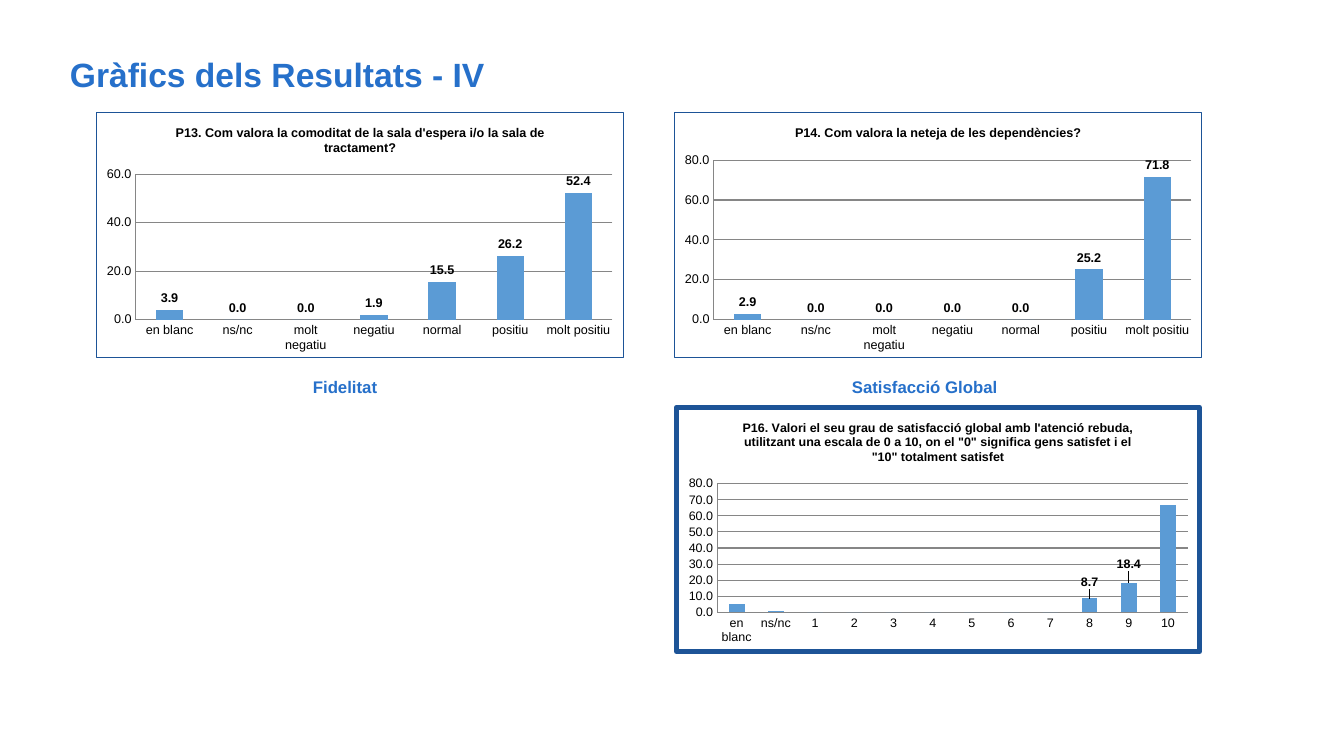
from dataclasses import dataclass
from lxml.etree import SubElement as Sub
from pptx import Presentation
from pptx.chart.data import CategoryChartData as Data
from pptx.dml.color import RGBColor as Rgb
from pptx.enum.chart import XL_CHART_TYPE as Kind, XL_LABEL_POSITION as Pos, XL_TICK_MARK as Tick
from pptx.enum.text import MSO_ANCHOR as Anchor
from pptx.oxml import parse_xml
from pptx.oxml.ns import nsdecls, qn
from pptx.util import Emu, Pt


@dataclass(frozen=True)
class Theme:
    font: str = "Arial"
    blue: str = "2670CA"
    edge: str = "1D5497"
    bar: str = "5B9BD5"
    grid: str = "868686"
    ink: str = "000000"
    head: int = 24
    sub: int = 12
    small: int = 9


LOOK = Theme()
SCALE = 914400 / 100.8
RATES = ["en blanc", "ns/nc", "molt negatiu", "negatiu", "normal", "positiu", "molt positiu"]
MARKS = ["en blanc", "ns/nc"] + [str(n) for n in range(1, 11)]


def px(n):
    return Emu(round(n * SCALE))


def style(font, size, color=LOOK.ink, bold=False):
    font.name = LOOK.font
    font.size = Pt(size)
    font.bold = bold
    font.color.rgb = Rgb.from_string(color)


def write(slide, text, box, size=LOOK.sub, color=LOOK.blue, bold=True, wrap=True,
          anchor=Anchor.TOP, space=1.0):
    frame = slide.shapes.add_textbox(*map(px, box)).text_frame
    frame.word_wrap = wrap
    frame.vertical_anchor = anchor
    line = frame.paragraphs[0]
    line.line_spacing = space
    run = line.add_run()
    run.text = text
    style(run.font, size, color, bold)


def layout(node, **parts):
    for child in node.findall(qn("c:layout")):
        node.remove(child)
    outer = Sub(node, qn("c:layout"))
    inner = Sub(outer, qn("c:manualLayout"))
    for name, value in parts.items():
        Sub(inner, qn(f"c:{name}"), val=str(value))
    return outer


def place(chart, box, plot):
    left, top, width, height = box
    x, y, w, h = plot
    area = chart._chartSpace.chart.plotArea
    area.insert(0, layout(
        area, layoutTarget="inner", xMode="edge", yMode="edge",
        x=round((x - left) / width, 4), y=round((y - top) / height, 4),
        w=round(w / width, 4), h=round(h / height, 4)))


def border(chart, width):
    chart._chartSpace.chart.addnext(parse_xml(
        f'<c:spPr {nsdecls("c", "a")}><a:solidFill><a:srgbClr val="FFFFFF"/></a:solidFill>'
        f'<a:ln w="{Pt(width)}"><a:solidFill><a:srgbClr val="{LOOK.edge}"/></a:solidFill>'
        '</a:ln></c:spPr>'))


def axes(chart, top, step):
    for axis in (chart.category_axis, chart.value_axis):
        axis.major_tick_mark = axis.minor_tick_mark = Tick.NONE
        axis.format.line.color.rgb = Rgb.from_string(LOOK.grid)
        axis.format.line.width = Pt(0.75)
        style(axis.tick_labels.font, LOOK.small)
    axis = chart.value_axis
    axis.minimum_scale, axis.maximum_scale, axis.major_unit = 0, top, step
    axis.tick_labels.number_format = "0.0"
    axis.tick_labels.number_format_is_linked = False
    line = axis.major_gridlines.format.line
    line.color.rgb = Rgb.from_string(LOOK.grid)
    line.width = Pt(0.75)


def tags(plot):
    plot.has_data_labels = True
    labels = plot.data_labels
    labels.show_value = True
    labels.number_format = "0.0"
    labels.number_format_is_linked = False
    labels.position = Pos.OUTSIDE_END
    style(labels.font, LOOK.small, bold=True)


def lift(series, index, shift):
    label = series.points[index].data_label
    style(label.font, LOOK.small, bold=True)
    label.position = Pos.OUTSIDE_END
    node = label._dLbl
    node.insert(1, layout(node, x=0, y=shift))


def graph(slide, title, cats, vals, box, plot, top, step=20, width=0.75, lifts=()):
    data = Data(number_format="0.0")
    data.categories = cats
    data.add_series("Series 1", vals)
    chart = slide.shapes.add_chart(Kind.COLUMN_CLUSTERED, *map(px, box), data).chart
    style(chart.font, LOOK.small)
    chart.has_legend = False
    chart.has_title = True
    run = chart.chart_title.text_frame.paragraphs[0].add_run()
    run.text = title
    style(run.font, LOOK.small, bold=True)
    bars = chart.plots[0]
    bars.gap_width = 150
    bars.vary_by_categories = False
    series = bars.series[0]
    series.format.fill.solid()
    series.format.fill.fore_color.rgb = Rgb.from_string(LOOK.bar)
    axes(chart, top, step)
    tags(bars)
    for index, shift in lifts:
        lift(series, index, shift)
    place(chart, box, plot)
    border(chart, width)


def main():
    deck = Presentation()
    deck.slide_width, deck.slide_height = px(1344), px(756)
    slide = deck.slides.add_slide(deck.slide_layouts[6])
    write(slide, "Gràfics dels Resultats - IV", (60, 54, 1229, 46), size=LOOK.head,
          anchor=Anchor.MIDDLE, space=0.9)
    graph(slide, "P13. Com valora la comoditat de la sala d'espera i/o la sala de tractament?",
          RATES, [3.9, 0, 0, 1.9, 15.5, 26.2, 52.4],
          (96, 112, 528, 246), (135, 174, 478, 146), 60)
    graph(slide, "P14. Com valora la neteja de les dependències?",
          RATES, [2.9, 0, 0, 0, 0, 25.2, 71.8],
          (674, 112, 528, 246), (713, 160, 479, 160), 80)
    graph(slide, "P16. Valori el seu grau de satisfacció global amb l'atenció rebuda, "
          "utilitzant una escala de 0 a 10, on el \"0\" significa gens satisfet i el "
          "\"10\" totalment satisfet",
          MARKS, [4.9, 1, 0, 0, 0, 0, 0, 0, 0, 8.7, 18.4, 67],
          (674, 405, 528, 249), (715, 483, 475, 131), 80, step=10, width=3.5,
          lifts=[(9, -0.02), (10, -0.03)])
    write(slide, "Fidelitat", (303, 372, 110, 30), wrap=False)
    write(slide, "Satisfacció Global", (842, 372, 180, 30), wrap=False)
    deck.save("out.pptx")


if __name__ == "__main__":
    main()
